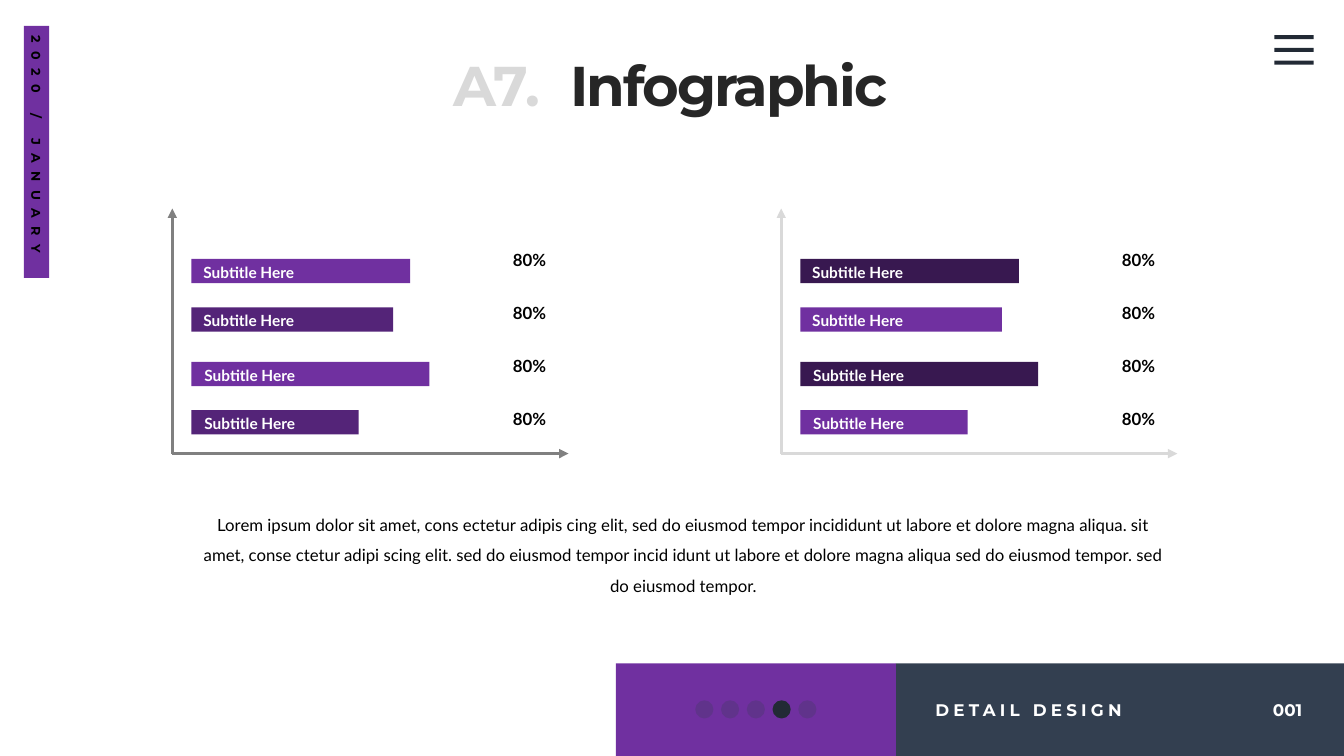
from dataclasses import dataclass, field
from typing import Any

from lxml.etree import SubElement
from pptx import Presentation
from pptx.dml.color import RGBColor
from pptx.enum.shapes import MSO_CONNECTOR, MSO_SHAPE
from pptx.enum.text import MSO_ANCHOR, MSO_AUTO_SIZE, PP_ALIGN
from pptx.oxml.ns import qn
from pptx.util import Pt

COLORS = {
    "purple": "7030A0",
    "plum": "542478",
    "aubergine": "381850",
    "slate": "333F50",
    "navy": "222A35",
    "gray": "808080",
    "silver": "D9D9D9",
    "charcoal": "262626",
    "black": "000000",
    "white": "FFFFFF",
}


@dataclass(frozen=True)
class Area:
    left: float
    top: float
    width: float
    height: float

    def lengths(self) -> tuple:
        return Pt(self.left), Pt(self.top), Pt(self.width), Pt(self.height)


@dataclass(frozen=True)
class TextStyle:
    size: float
    color: str
    name: str = "Lato"
    bold: bool = True
    spacing: float = 0
    wrap: bool = True
    anchor: Any = MSO_ANCHOR.TOP
    paragraph: dict = field(default_factory=dict)


@dataclass(frozen=True)
class Bar:
    top: float
    width: float
    label_left: float
    label: str
    value: str


@dataclass(frozen=True)
class Panel:
    left: float
    axis_color: str
    bar_colors: tuple


JUSTIFIED = {"alignment": PP_ALIGN.JUSTIFY, "line_spacing": 1.5}
CENTERED = {"alignment": PP_ALIGN.CENTER}
LEFT = {"alignment": PP_ALIGN.LEFT}

LABEL = TextStyle(11, "white", paragraph=JUSTIFIED)
VALUE = TextStyle(12, "black", paragraph=JUSTIFIED)
BODY = TextStyle(12, "black", bold=False, paragraph={**CENTERED, "line_spacing": 1.5})
NUMBER = TextStyle(40, "silver", "Montserrat", wrap=False, paragraph=CENTERED)
TITLE = TextStyle(40, "charcoal", "Montserrat", spacing=-1.5, wrap=False, paragraph=CENTERED)
PAGE_NUMBER = TextStyle(12, "white", "Montserrat", wrap=False, paragraph=LEFT)
FOOTER = TextStyle(12, "white", "Montserrat", spacing=3, wrap=False, paragraph=LEFT)
DATE = TextStyle(9, "black", "Montserrat", spacing=6, wrap=False,
                 anchor=MSO_ANCHOR.MIDDLE, paragraph=LEFT)

BARS = [
    Bar(185, 156.2, 15.1, "Subtitle Here", "80%"),
    Bar(219.6, 144, 15.1, "Subtitle Here", "80%"),
    Bar(258.5, 169.9, 15.8, "Subtitle Here", "80%"),
    Bar(293, 119.5, 15.8, "Subtitle Here", "80%"),
]
PANELS = [
    Panel(123.1, "gray", ("purple", "plum")),
    Panel(558, "silver", ("aubergine", "purple")),
]
AXIS_BASE, AXIS_TOP, AXIS_LENGTH = 324, 149, 283
VALUE_TOP, VALUE_STEP = 167.9, 37.7
DOT_COUNT, ACTIVE_DOT = 5, 3


def set_values(target: Any, values: dict) -> None:
    for name, value in values.items():
        setattr(target, name, value)


def color_of(name: str) -> RGBColor:
    return RGBColor.from_string(COLORS[name])


def write_text(frame: Any, text: str, style: TextStyle) -> None:
    set_values(frame, {"word_wrap": style.wrap, "auto_size": MSO_AUTO_SIZE.NONE,
                       "vertical_anchor": style.anchor})
    para = frame.paragraphs[0]
    set_values(para, {"space_before": Pt(0), **style.paragraph})
    span = para.add_run()
    span.text = text
    set_values(span.font, {"size": Pt(style.size), "name": style.name, "bold": style.bold})
    span.font.color.rgb = color_of(style.color)
    if style.spacing:
        span._r.get_or_add_rPr().set("spc", str(round(style.spacing * 100)))


def add_text(page: Any, area: Area, text: str, style: TextStyle) -> None:
    write_text(page.shapes.add_textbox(*area.lengths()).text_frame, text, style)


def add_block(page: Any, area: Area, color: str,
              kind: Any = MSO_SHAPE.RECTANGLE, opacity: int = 100) -> Any:
    block = page.shapes.add_shape(kind, *area.lengths())
    block.shadow.inherit = False
    block.fill.solid()
    block.fill.fore_color.rgb = color_of(color)
    block.line.fill.background()
    if opacity < 100:
        tint = block.fill._xPr.find(qn("a:solidFill"))[0]
        SubElement(tint, qn("a:alpha")).set("val", str(opacity * 1000))
    return block


def add_axis(page: Any, left: float, end: tuple[float, float], color: str) -> None:
    axis = page.shapes.add_connector(MSO_CONNECTOR.STRAIGHT, Pt(left), Pt(AXIS_BASE),
                                     Pt(end[0]), Pt(end[1]))
    axis.line.width = Pt(2.25)
    axis.line.color.rgb = color_of(color)
    SubElement(axis.line._get_or_add_ln(), qn("a:tailEnd")).set("type", "triangle")
    SubElement(axis._element.spPr, qn("a:effectLst"))


def add_panel(page: Any, panel: Panel) -> None:
    for end in ((panel.left, AXIS_TOP), (panel.left + AXIS_LENGTH, AXIS_BASE)):
        add_axis(page, panel.left, end, panel.axis_color)
    for index, bar in enumerate(BARS):
        color = panel.bar_colors[index % len(panel.bar_colors)]
        add_block(page, Area(panel.left + 13.7, bar.top, bar.width, 17.3), color)
        add_text(page, Area(panel.left + bar.label_left, bar.top - 7.2, 98.6, 25.2),
                 bar.label, LABEL)
        add_text(page, Area(panel.left + 236.2, VALUE_TOP + index * VALUE_STEP, 46.8, 26.6),
                 bar.value, VALUE)


def add_heading(page: Any) -> None:
    add_text(page, Area(313.9, 32.4, 81.4, 55.4), "A7.", NUMBER)
    title = page.shapes.title
    left, top, width, height = Area(398.9, 32.4, 243.4, 55.4).lengths()
    set_values(title, {"left": left, "top": top, "width": width, "height": height})
    write_text(title.text_frame, "Infographic", TITLE)


def add_footer(page: Any) -> None:
    add_block(page, Area(640, 473.8, 320, 66.2), "slate")
    add_text(page, Area(902.2, 496.1, 36, 21.6), "001", PAGE_NUMBER)
    add_text(page, Area(661, 496.1, 151.9, 21.6), "DETAIL DESIGN", FOOTER)
    add_block(page, Area(440, 473.8, 200, 66.2), "purple")
    for index in range(DOT_COUNT):
        active = index == ACTIVE_DOT
        add_block(page, Area(496.6 + index * 18.4, 500.2, 13, 13),
                  "navy" if active else "slate", MSO_SHAPE.OVAL, 100 if active else 25)


def add_margin_items(page: Any) -> None:
    ribbon = add_block(page, Area(-64, 99.5, 180, 18), "purple")
    ribbon.rotation = 90
    write_text(ribbon.text_frame, "2020 / JANUARY", DATE)
    for index in range(3):
        add_block(page, Area(910.2, 25.2 + index * 9.1, 28.1, 2.9), "navy")


def main() -> None:
    deck = Presentation()
    set_values(deck, {"slide_width": Pt(960), "slide_height": Pt(540)})
    page = deck.slides.add_slide(deck.slide_layouts[5])
    add_heading(page)
    for panel in PANELS:
        add_panel(page, panel)
    add_text(page, Area(136.1, 357.1, 704.2, 69.8),
             "Lorem ipsum dolor sit amet, cons ectetur adipis cing elit, sed do eiusmod tempor "
             "incididunt ut labore et dolore magna aliqua. sit amet, conse ctetur adipi scing elit. "
             "sed do eiusmod tempor incid idunt ut labore et dolore magna aliqua sed do eiusmod "
             "tempor. sed do eiusmod tempor.", BODY)
    add_footer(page)
    add_margin_items(page)
    deck.save("out.pptx")


if __name__ == "__main__":
    main()
